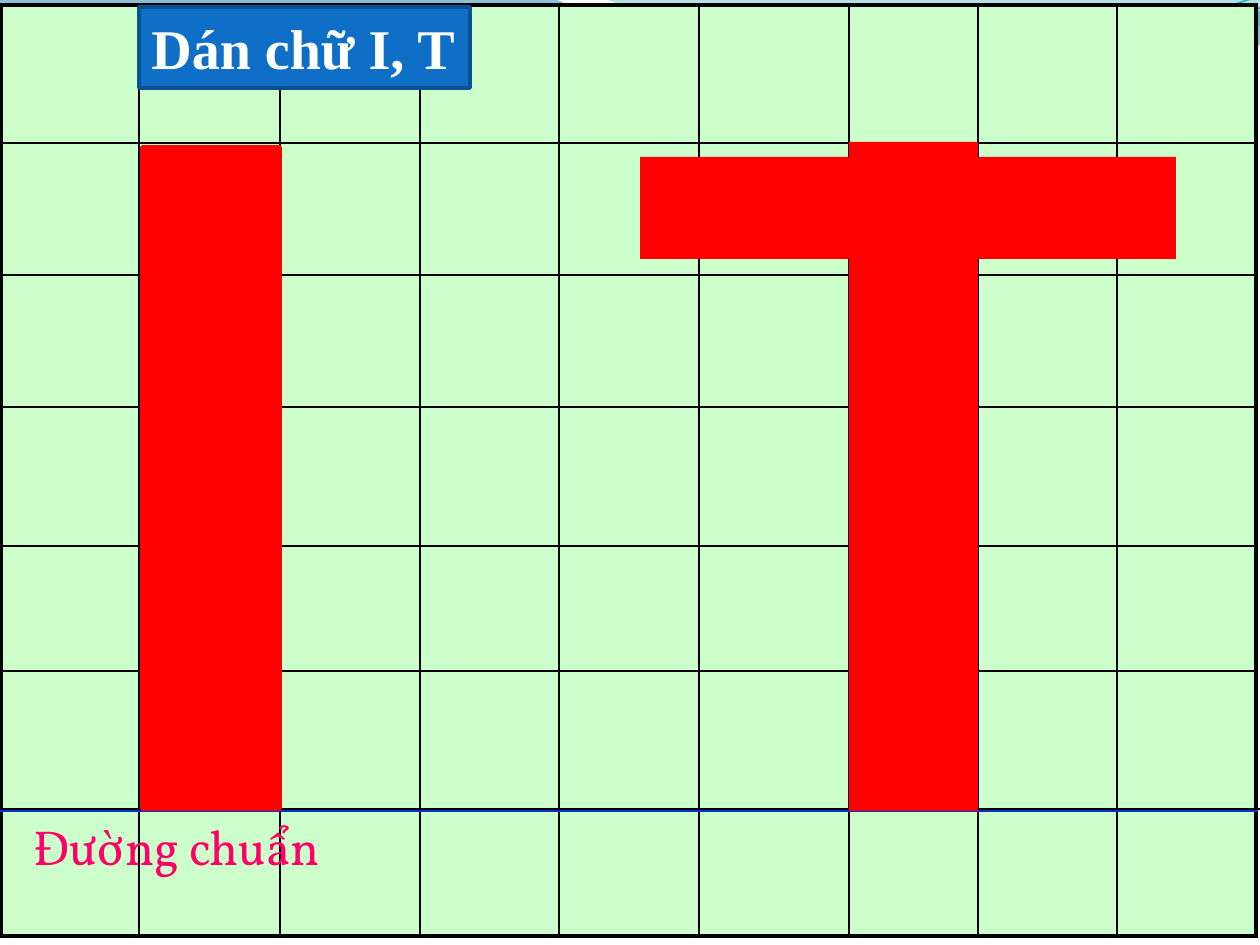
from lxml.etree import SubElement
from pptx import Presentation
from pptx.dml.color import RGBColor
from pptx.enum.shapes import MSO_CONNECTOR, MSO_SHAPE
from pptx.enum.text import MSO_ANCHOR, PP_ALIGN
from pptx.oxml.ns import qn
from pptx.util import Pt

PX = 914400 / 126
SLIDE_SIZE = (1260, 945)
COLORS = {
    "cell": "CCFFCC", "grid": "000000", "baseline": "0033CC", "letter": "FF0000",
    "label": "FF0066", "title_fill": "0F6FC6", "title_line": "0B5292", "title_text": "FFFFFF",
    "wave_blue": "0074A1", "wave_cyan": "00C6CF", "wave_teal": "00A1A9", "wave_sky": "008BBF",
    "line_cyan": "0AB8BF", "line_blue": "0F6FC6",
}
TITLE = ("Dán chữ I, T", "Times New Roman", 32, "title_text", True)
LABEL = ("Đường chuẩn", "Vollkorn", 28, "label", False)
TITLE_BOX = (139, 7, 331, 81)
LABEL_BOX = (21, 810, 388, 72)

GRID_ORIGIN = (1, 5)
COLUMNS = [138, 141, 140, 139, 140, 150, 129, 139, 139]
ROWS = [138, 132, 132, 139, 125, 139, 126]
BASELINE_ROW = 5
BASELINE_Y = 809

LETTER_I_SQUARE = (143, 148, 136, 132)
LETTER_I_COUNT = 5
LETTER_T_PARTS = [(849, 142, 129, 669), (640, 157, 536, 102)]

WAVES = [
    ([(-1, -1), (554, -1),
      (600, 21, 837, 79, 955, 79), (1074, 79, 1207, 33, 1260, 11), (1261, 45),
      (1239, 55, 1096, 96, 940, 95), (784, 95, 481, 35, 324, 43), (163, 45, 58, 105, -1, 142)],
     [(0, "wave_blue", 45), (1, "wave_cyan", 55)]),
    ([(604, -1),
      (641, 14, 859, 78, 969, 82), (1079, 87, 1211, 40, 1260, 26), (1260, 0)],
     [(0, "wave_teal", 30), (0.8, "wave_sky", 45)]),
]
WAVE_LINES = [
    ([(0, 140),
      (60, 117, 199, 72, 349, 66), (498, 59, 747, 112, 898, 101), (1050, 89, 1182, 19, 1257, -3)],
     "line_cyan", 0.85),
    ([(0, 131),
      (59, 121, 207, 77, 357, 71), (508, 64, 752, 106, 903, 95), (1053, 84, 1186, 26, 1260, 8)],
     "line_blue", 0.75),
]


def emu(values):
    return [round(value * PX) for value in values]


def rgb(name):
    return RGBColor.from_string(COLORS[name])


def add_curve(slide, outline, close):
    start, *segments = outline
    points = [pair for segment in segments for pair in zip(segment[::2], segment[1::2])]
    builder = slide.shapes.build_freeform(*start, scale=PX)
    builder.add_line_segments(points, close=close)
    shape = builder.convert_to_shape()
    shape.shadow.inherit = False
    lines = iter(list(shape._element.iter(qn("a:lnTo"))))
    for segment in segments:
        first = next(lines)
        if len(segment) == 6:
            first.tag = qn("a:cubicBezTo")
            for line in (next(lines), next(lines)):
                first.append(line[0])
                line.getparent().remove(line)
    return shape


def add_wave(slide, outline, stops):
    shape = add_curve(slide, outline, True)
    shape.line.fill.background()
    shape.fill.gradient()
    shape.fill.gradient_angle = 270
    for stop, (position, color, _) in zip(shape.fill.gradient_stops, stops):
        stop.position = position
        stop.color.rgb = rgb(color)
    for element, (_, _, alpha) in zip(shape._element.iter(qn("a:srgbClr")), stops):
        SubElement(element, qn("a:alpha"), val=str(alpha * 1000))


def add_wave_line(slide, outline, color, width):
    shape = add_curve(slide, outline, False)
    shape.fill.background()
    shape.line.color.rgb = rgb(color)
    shape.line.width = Pt(width)


def set_border(cell, side, color, width):
    properties = cell._tc.get_or_add_tcPr()
    line = SubElement(properties, qn(f"a:{side}"), w=str(Pt(width)))
    fill = SubElement(line, qn("a:solidFill"))
    SubElement(fill, qn("a:srgbClr"), val=COLORS[color])


def add_grid(slide):
    frame = slide.shapes.add_table(len(ROWS), len(COLUMNS), *emu(GRID_ORIGIN),
                                   *emu((sum(COLUMNS), sum(ROWS))))
    table = frame.table
    for column, width in zip(table.columns, emu(COLUMNS)):
        column.width = width
    for row, height in zip(table.rows, emu(ROWS)):
        row.height = height
    outer, inner, baseline = ("grid", 2.25), ("grid", 1), ("baseline", 3)
    last_row, last_column = len(ROWS) - 1, len(COLUMNS) - 1
    for r, row in enumerate(table.rows):
        top = outer if r == 0 else baseline if r == BASELINE_ROW + 1 else inner
        bottom = outer if r == last_row else baseline if r == BASELINE_ROW else inner
        for c, cell in enumerate(row.cells):
            set_border(cell, "lnL", *(outer if c == 0 else inner))
            set_border(cell, "lnR", *(outer if c == last_column else inner))
            set_border(cell, "lnT", *top)
            set_border(cell, "lnB", *bottom)
            cell.fill.solid()
            cell.fill.fore_color.rgb = rgb("cell")


def add_baseline(slide):
    line = slide.shapes.add_connector(MSO_CONNECTOR.STRAIGHT,
                                      *emu((0, BASELINE_Y, SLIDE_SIZE[0], BASELINE_Y)))
    line.line.color.rgb = rgb("grid")
    line.line.width = Pt(0.75)
    SubElement(line._element.spPr, qn("a:effectLst"))


def add_rectangle(slide, box, fill, line=None, width=0):
    shape = slide.shapes.add_shape(MSO_SHAPE.RECTANGLE, *emu(box))
    shape.shadow.inherit = False
    shape.fill.solid()
    shape.fill.fore_color.rgb = rgb(fill)
    if line:
        shape.line.color.rgb = rgb(line)
        shape.line.width = Pt(width)
    else:
        shape.line.fill.background()
    return shape


def write(shape, text, font, size, color, bold, wrap):
    shape.text_frame.word_wrap = wrap
    paragraph = shape.text_frame.paragraphs[0]
    paragraph.alignment = PP_ALIGN.LEFT
    run = paragraph.add_run()
    run.text = text
    run.font.name = font
    run.font.size = Pt(size)
    run.font.bold = bold
    run.font.color.rgb = rgb(color)


def main():
    presentation = Presentation()
    presentation.slide_width, presentation.slide_height = emu(SLIDE_SIZE)
    slide = presentation.slides.add_slide(presentation.slide_layouts[6])
    for wave in WAVES:
        add_wave(slide, *wave)
    for wave_line in WAVE_LINES:
        add_wave_line(slide, *wave_line)
    add_grid(slide)
    add_baseline(slide)
    write(slide.shapes.add_textbox(*emu(LABEL_BOX)), *LABEL, wrap=True)
    left, top, width, height = LETTER_I_SQUARE
    for index in range(LETTER_I_COUNT):
        add_rectangle(slide, (left, top + index * height, width, height), "letter", "letter", 3)
    for part in LETTER_T_PARTS:
        add_rectangle(slide, part, "letter")
    title = add_rectangle(slide, TITLE_BOX, "title_fill", "title_line", 2)
    title.text_frame.vertical_anchor = MSO_ANCHOR.MIDDLE
    write(title, *TITLE, wrap=False)
    presentation.save("out.pptx")


if __name__ == "__main__":
    main()
